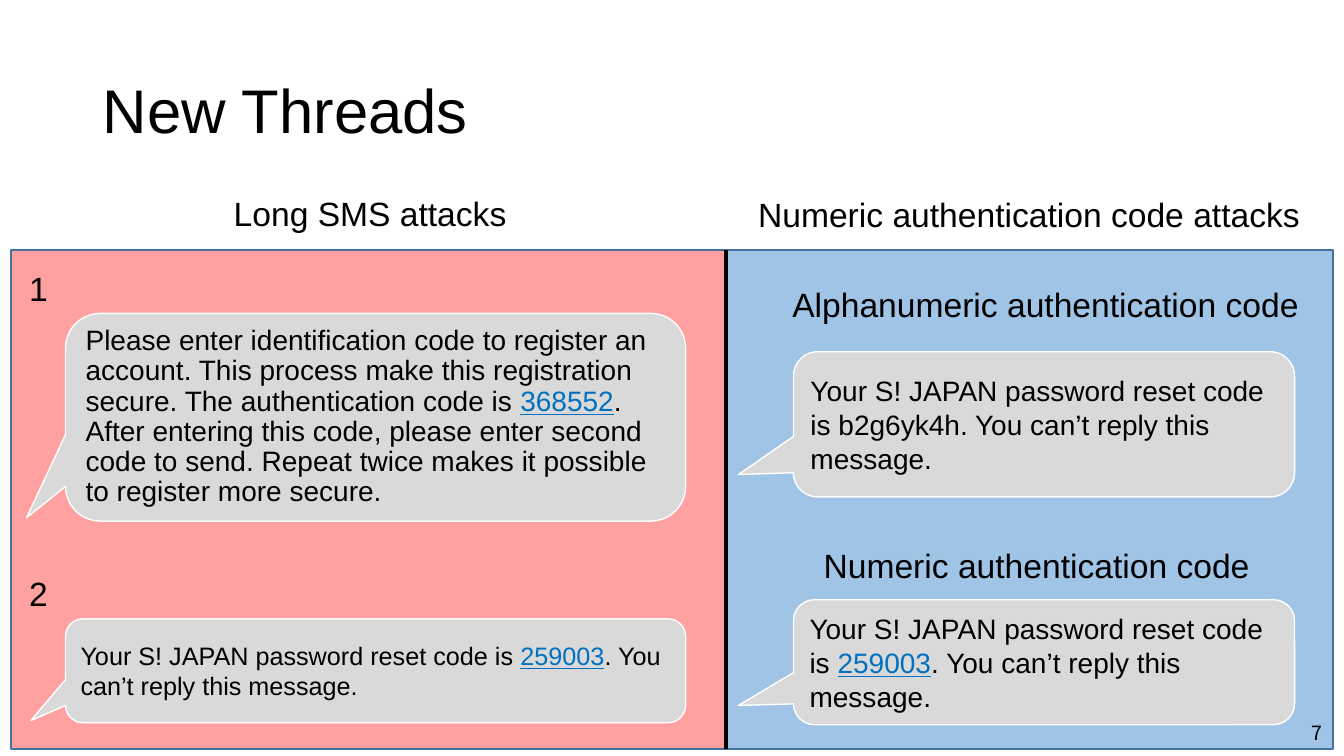
from lxml import etree
from pptx import Presentation
from pptx.dml.color import RGBColor
from pptx.enum.shapes import MSO_CONNECTOR, MSO_SHAPE
from pptx.enum.text import MSO_ANCHOR, PP_ALIGN
from pptx.oxml.ns import qn
from pptx.util import Inches, Pt

PANEL_TOP, PANEL_HEIGHT, DIVIDER = 2.48, 4.95, 7.2
PANELS = [
    (DIVIDER, 6.02, "5B9BD5", 58),
    (0.11, DIVIDER - 0.11, "FF0000", 37),
]
HEADINGS = [
    ("Long SMS attacks", 2.22, 1.86, 3.03),
    ("Numeric authentication code attacks", 7.42, 1.87, 5.59),
    ("Alphanumeric authentication code", 7.76, 2.77, 5.37),
    ("Numeric authentication code", 8.07, 5.36, 4.57),
    ("1", 0.19, 2.61, 0.39),
    ("2", 0.19, 5.63, 0.39),
]
LEFT_COLUMN, RIGHT_COLUMN = (0.65, 6.15), (7.87, 4.97)
RESET = "Your S! JAPAN password reset code is "
NO_REPLY = ". You can’t reply this message."
REGISTER = ("Please enter identification code to register an account. This process make "
            "this registration secure. The authentication code is ")
REPEAT = (". After entering this code, please enter second code to send. "
          "Repeat twice makes it possible to register more secure.")
MESSAGES = [
    (LEFT_COLUMN, 3.11, 2.06, (-0.563, 0.484), 20, 0.9, (REGISTER, "368552", REPEAT)),
    (LEFT_COLUMN, 6.14, 1.03, (-0.556, 0.48), 18, None, (RESET, "259003", NO_REPLY)),
    (RIGHT_COLUMN, 3.49, 1.44, (-0.61, 0.346), 20, None, (RESET + "b2g6yk4h" + NO_REPLY,)),
    (RIGHT_COLUMN, 5.95, 1.24, (-0.61, 0.346), 20, None, (RESET, "259003", NO_REPLY)),
]


def color(value):
    return RGBColor.from_string(value)


def style_font(paragraph, size, name="Arial"):
    paragraph.font.size = Pt(size)
    paragraph.font.name = name
    paragraph.font.color.rgb = color("000000")


def add_box(kind, left, top, width, height, fill, line):
    shape = slide.shapes.add_shape(kind, Inches(left), Inches(top), Inches(width), Inches(height))
    shape.shadow.inherit = False
    shape.fill.solid()
    shape.fill.fore_color.rgb = color(fill)
    shape.line.color.rgb = color(line)
    shape.line.width = Pt(1)
    return shape


def add_panel(left, width, fill, opacity):
    panel = add_box(MSO_SHAPE.RECTANGLE, left, PANEL_TOP, width, PANEL_HEIGHT, fill, "43739E")
    fill_color = panel.fill._xPr.find(qn("a:solidFill"))[0]
    etree.SubElement(fill_color, qn("a:alpha")).set("val", str(opacity * 1000))


def add_text(text, left, top, width, height=0.5, size=24, name="Arial",
             anchor=MSO_ANCHOR.TOP, wrap=False):
    box = slide.shapes.add_textbox(Inches(left), Inches(top), Inches(width), Inches(height))
    box.text_frame.word_wrap = wrap
    box.text_frame.vertical_anchor = anchor
    paragraph = box.text_frame.paragraphs[0]
    paragraph.text = text
    style_font(paragraph, size, name)
    return paragraph


def add_message(column, top, height, tip, size, spacing, parts):
    left, width = column
    bubble = add_box(MSO_SHAPE.ROUNDED_RECTANGULAR_CALLOUT, left, top, width, height,
                     "D9D9D9", "FFFFFF")
    for index, value in enumerate((*tip, 0.167)):
        bubble.adjustments[index] = value
    bubble.text_frame.word_wrap = True
    bubble.text_frame.vertical_anchor = MSO_ANCHOR.MIDDLE
    paragraph = bubble.text_frame.paragraphs[0]
    paragraph.alignment = PP_ALIGN.LEFT
    paragraph.line_spacing = spacing
    style_font(paragraph, size)
    for part in parts:
        run = paragraph.add_run()
        run.text = part
        if part.isdigit():
            run.font.color.rgb = color("0070C0")
            run.font.underline = True


presentation = Presentation()
presentation.slide_width, presentation.slide_height = Inches(13.33), Inches(7.5)
slide = presentation.slides.add_slide(presentation.slide_layouts[6])

for panel in PANELS:
    add_panel(*panel)

title = add_text("New Threads", 0.92, 0.4, 11.5, 1.45, 44, anchor=MSO_ANCHOR.MIDDLE, wrap=True)
title.line_spacing = 0.9

for heading in HEADINGS:
    add_text(*heading)
for message in MESSAGES:
    add_message(*message)

divider = slide.shapes.add_connector(MSO_CONNECTOR.STRAIGHT, Inches(DIVIDER), Inches(PANEL_TOP),
                                     Inches(DIVIDER), Inches(PANEL_TOP + PANEL_HEIGHT))
divider.line.color.rgb = color("000000")
divider.line.width = Pt(3.25)
etree.SubElement(divider._element.spPr, qn("a:effectLst"))

page_number = add_text("7", 10.21, 7.07, 3, 0.4, 14, "Noto Sans CJK JP", MSO_ANCHOR.MIDDLE, True)
page_number.alignment = PP_ALIGN.RIGHT

presentation.save("out.pptx")
